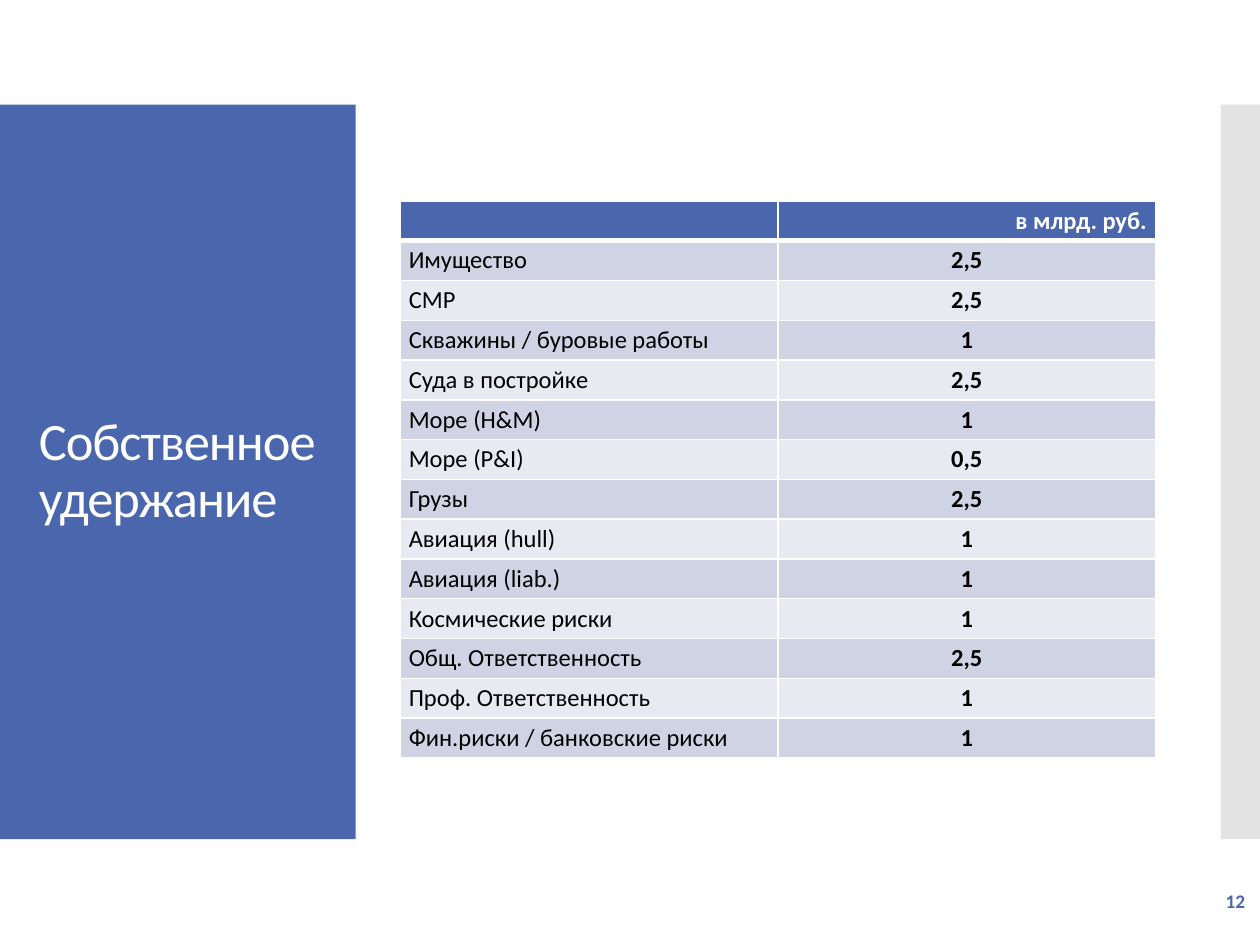
from lxml.etree import SubElement
from pptx import Presentation
from pptx.dml.color import RGBColor
from pptx.enum.shapes import MSO_SHAPE
from pptx.enum.text import MSO_ANCHOR, MSO_AUTO_SIZE, PP_ALIGN
from pptx.oxml.ns import qn
from pptx.util import Cm, Pt

COLORS = {
    "blue": "4A66AC",
    "grey": "C8C8C8",
    "white": "FFFFFF",
    "black": "000000",
    "band_dark": "D0D3E3",
    "band_light": "E9EAF1",
}
FONT = "Calibri"
UNIT = "в млрд. руб."
RETENTIONS = [
    ("Имущество", "2,5"),
    ("СМР", "2,5"),
    ("Скважины / буровые работы", "1"),
    ("Суда в постройке", "2,5"),
    ("Море (H&M)", "1"),
    ("Море (P&I)", "0,5"),
    ("Грузы", "2,5"),
    ("Авиация (hull)", "1"),
    ("Авиация (liab.)", "1"),
    ("Космические риски", "1"),
    ("Общ. Ответственность", "2,5"),
    ("Проф. Ответственность", "1"),
    ("Фин.риски / банковские риски", "1"),
]


def rgb(name):
    return RGBColor.from_string(COLORS[name])


def write(tf, text, size=14, color="black", bold=False, align=PP_ALIGN.LEFT,
          line_spacing=None, tracking=None):
    p = tf.paragraphs[0]
    p.alignment = align
    p.line_spacing = line_spacing
    if not text:
        # The end mark keeps an empty cell at the height of its text size.
        SubElement(p._p, qn("a:endParaRPr"), sz=str(size * 100))
        return
    r = p.add_run()
    r.text = text
    r.font.name = FONT
    r.font.size = Pt(size)
    r.font.bold = bold
    r.font.color.rgb = rgb(color)
    if tracking is not None:
        r.font._element.set("spc", str(round(tracking * 100)))


def add_panel(s, left, width, color, opacity=None):
    sp = s.shapes.add_shape(MSO_SHAPE.RECTANGLE, Cm(left), Cm(2.11), Cm(width), Cm(14.81))
    sp.shadow.inherit = False
    sp.line.fill.background()
    sp.fill.solid()
    sp.fill.fore_color.rgb = rgb(color)
    if opacity is not None:
        clr = sp.element.spPr.find(".//" + qn("a:srgbClr"))
        SubElement(clr, qn("a:alpha"), val=str(opacity * 1000))


def place_title(s, text):
    sp = s.shapes.title
    sp.left, sp.top, sp.width, sp.height = Cm(0.53), Cm(3.12), Cm(6.15), Cm(12.78)
    sp.element.getparent().append(sp.element)  # in front of the panels
    tf = sp.text_frame
    tf.word_wrap = True
    tf.auto_size = MSO_AUTO_SIZE.NONE
    tf.vertical_anchor = MSO_ANCHOR.MIDDLE
    write(tf, text, size=30, color="white", line_spacing=0.9, tracking=-0.6)


def set_borders(cell, top=1, bottom=1):
    tcPr = cell._tc.get_or_add_tcPr()
    for side, width in (("L", 1), ("R", 1), ("T", top), ("B", bottom)):
        ln = SubElement(tcPr, qn(f"a:ln{side}"), w=str(Pt(width)))
        fill = SubElement(ln, qn("a:solidFill"))
        SubElement(fill, qn("a:srgbClr"), val=COLORS["white"])


def format_cell(cell, text, fill, top=1, bottom=1, **text_format):
    set_borders(cell, top, bottom)
    cell.fill.solid()
    cell.fill.fore_color.rgb = rgb(fill)
    cell.margin_left = cell.margin_right = Cm(0.18)
    cell.margin_top = cell.margin_bottom = Cm(0.1)
    write(cell.text_frame, text, **text_format)


def add_retention_table(s):
    rows = len(RETENTIONS) + 1
    table = s.shapes.add_table(rows, 2, Cm(8.06), Cm(4.05), Cm(15.24), Cm(0.79 * rows)).table
    for row in table.rows:
        row.height = Cm(0.79)
    for col, text in enumerate(("", UNIT)):
        format_cell(table.cell(0, col), text, "blue", bottom=3,
                    color="white", bold=True, align=PP_ALIGN.RIGHT)
    for i, (risk, amount) in enumerate(RETENTIONS, start=1):
        band = "band_dark" if i % 2 else "band_light"
        top = 3 if i == 1 else 1
        format_cell(table.cell(i, 0), risk, band, top)
        format_cell(table.cell(i, 1), amount, band, top, bold=True, align=PP_ALIGN.CENTER)


def add_page_number(s, number):
    tf = s.shapes.add_textbox(Cm(22.15), Cm(17.65), Cm(3.2), Cm(1.02)).text_frame
    tf.word_wrap = True
    tf.vertical_anchor = MSO_ANCHOR.MIDDLE
    write(tf, number, size=11, color="blue", bold=True, align=PP_ALIGN.RIGHT)


def main():
    prs = Presentation()
    prs.slide_width, prs.slide_height = Cm(25.4), Cm(19.05)
    s = prs.slides.add_slide(prs.slide_layouts[5])
    add_panel(s, 0, 7.17, "blue")
    add_panel(s, 24.61, 0.79, "grey", opacity=50)
    place_title(s, "Собственное удержание")
    add_retention_table(s)
    add_page_number(s, "12")
    prs.save("out.pptx")


if __name__ == "__main__":
    main()
